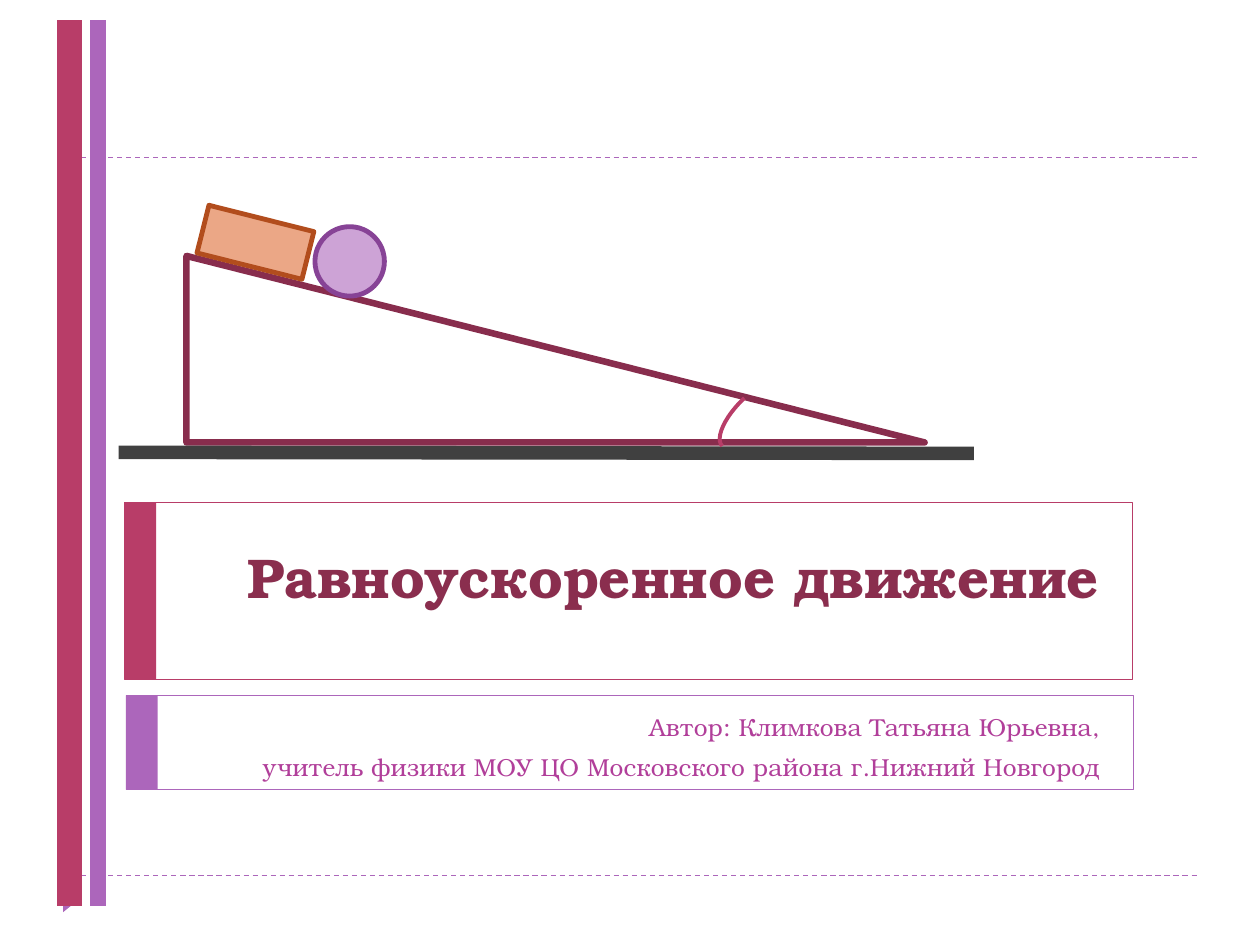
from lxml.etree import SubElement
from pptx import Presentation
from pptx.dml.color import RGBColor
from pptx.enum.dml import MSO_LINE
from pptx.enum.shapes import MSO_CONNECTOR, MSO_SHAPE
from pptx.enum.text import MSO_ANCHOR, MSO_AUTO_SIZE, PP_ALIGN
from pptx.oxml.ns import qn
from pptx.util import Cm, Pt

FONT = "TeX Gyre Bonum"
CRIMSON = "B83D68"
VIOLET = "AC66BB"


def paint(color_format, color):
    """Give a fill or a font colour its hex value."""
    color_format.rgb = RGBColor.from_string(color)


def add_figure(slide, preset, box, fill=None, line=None, width=0, rotation=0):
    """Add a preset shape placed in centimetres."""
    figure = slide.shapes.add_shape(preset, *map(Cm, box))
    figure.shadow.inherit = False
    figure.rotation = rotation
    if fill:
        figure.fill.solid()
        paint(figure.fill.fore_color, fill)
    else:
        figure.fill.background()
    if line:
        paint(figure.line.color, line)
        figure.line.width = Pt(width)
    else:
        figure.line.fill.background()


def add_line(slide, ends, color, width, dash=None):
    """Add a straight line between two points in centimetres."""
    line = slide.shapes.add_connector(MSO_CONNECTOR.STRAIGHT, *map(Cm, ends))
    paint(line.line.color, color)
    line.line.width = Pt(width)
    line.line.dash_style = dash
    SubElement(line._element.spPr, qn("a:effectLst"))


def add_frame(slide, box, color):
    """Add an outlined frame with a solid band on its left."""
    left, top, _, height = box
    add_figure(slide, MSO_SHAPE.RECTANGLE, box, line=color, width=0.5)
    add_figure(slide, MSO_SHAPE.RECTANGLE, (left, top, 0.64, height), fill=color)


def fill_placeholder(placeholder, box, lines, size, color, bold=False):
    """Move a placeholder and write right-aligned lines into it."""
    placeholder.left, placeholder.top, placeholder.width, placeholder.height = map(Cm, box)
    frame = placeholder.text_frame
    frame.word_wrap = True
    frame.auto_size = MSO_AUTO_SIZE.NONE
    frame.vertical_anchor = MSO_ANCHOR.TOP
    for index, line in enumerate(lines):
        paragraph = frame.add_paragraph() if index else frame.paragraphs[0]
        paragraph.alignment = PP_ALIGN.RIGHT
        paragraph.space_before = Pt(6 if index else 0)
        run = paragraph.add_run()
        run.text = line
        run.font.name = FONT
        run.font.size = Pt(size)
        run.font.bold = bold
        paint(run.font.color, color)


def add_inclined_plane(slide):
    """Draw the block and the ball on the incline, with ground and angle."""
    add_figure(slide, MSO_SHAPE.RIGHT_TRIANGLE, (3.76, 5.16, 14.88, 3.76),
               line="882D4D", width=3.75)
    add_figure(slide, MSO_SHAPE.FLOWCHART_PROCESS, (4.06, 4.39, 2.18, 0.99),
               "EBA786", "B24D1D", 2.75, rotation=14.1)
    add_figure(slide, MSO_SHAPE.OVAL, (6.35, 4.57, 1.4, 1.4), "CDA3D6", "874396", 2.75)
    add_line(slide, (2.39, 9.12, 19.63, 9.14), "404040", 7.75)


def main():
    """Build the title slide."""
    deck = Presentation()
    deck.slide_width, deck.slide_height = Cm(25.4), Cm(19.05)
    slide = deck.slides.add_slide(deck.slide_layouts[0])

    for rule_y in (17.65, 3.18):
        add_line(slide, (1.27, rule_y, 24.13, rule_y), VIOLET, 0.75, MSO_LINE.DASH)
    add_figure(slide, MSO_SHAPE.ISOSCELES_TRIANGLE, (1.17, 17.96, 0.53, 0.33),
               fill=VIOLET, rotation=90)
    add_frame(slide, (2.51, 10.13, 20.32, 3.56), CRIMSON)
    add_frame(slide, (2.54, 14.02, 20.32, 1.9), VIOLET)

    title, author = slide.placeholders
    fill_placeholder(title, (3.38, 10.8, 19.05, 2.74),
                     ["Равноускоренное движение"], 32, "8A2E4E", bold=True)
    fill_placeholder(author, (3.38, 14.22, 19.05, 1.47),
                     ["Автор: Климкова Татьяна Юрьевна,",
                      "учитель физики МОУ ЦО Московского района г.Нижний Новгород"],
                     14, "B13F9A")

    add_inclined_plane(slide)
    for bar_x, color, width in ((1.4, CRIMSON, 14), (1.98, VIOLET, 9.25)):
        add_line(slide, (bar_x, 0.41, bar_x, 18.26), color, width)
    add_figure(slide, MSO_SHAPE.ARC, (14.88, 7.32, 0.79, 1.98),
               line=CRIMSON, width=2.25, rotation=226.5)
    deck.save("out.pptx")


if __name__ == "__main__":
    main()
